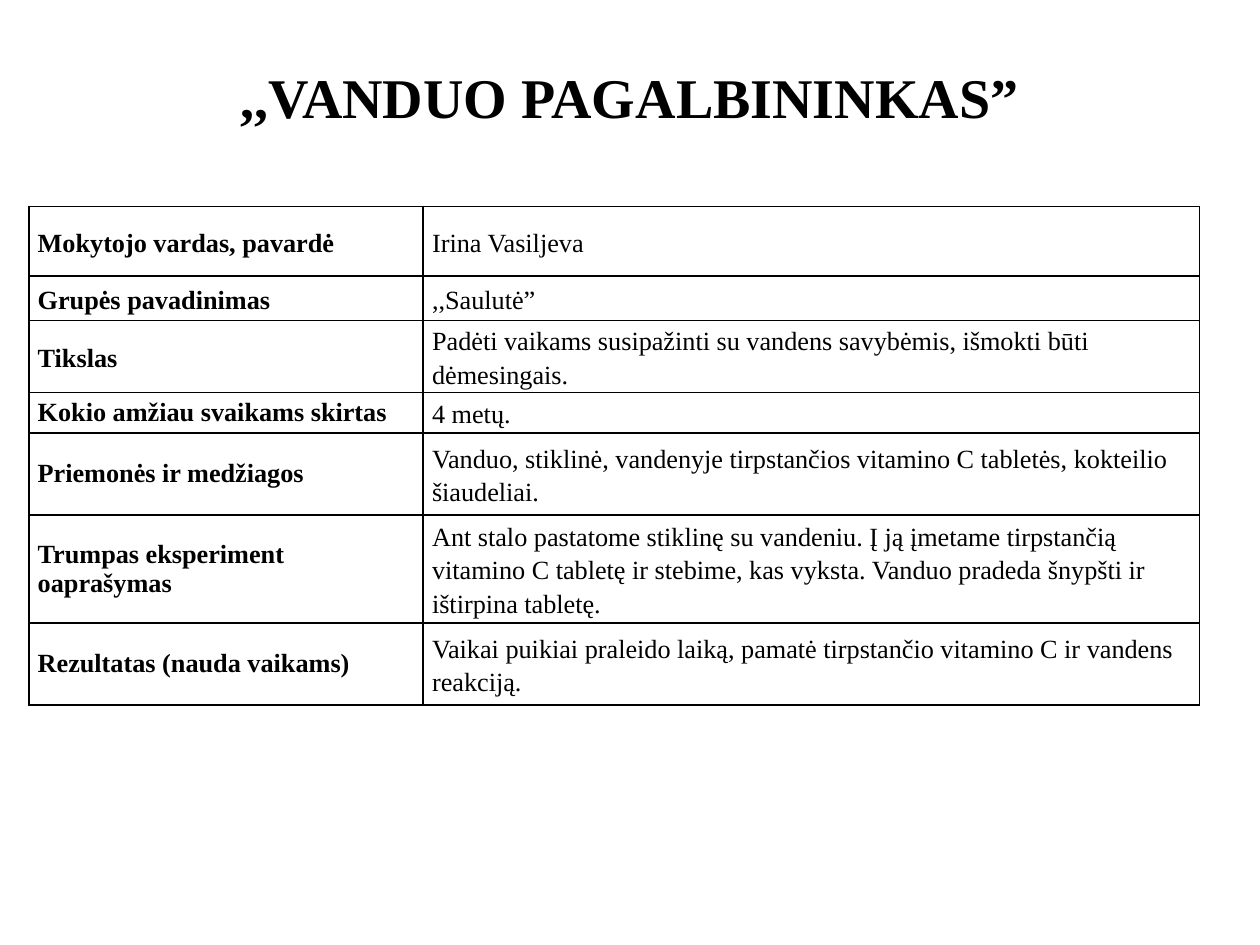
from dataclasses import dataclass

from lxml import etree
from pptx import Presentation
from pptx.dml.color import RGBColor
from pptx.enum.text import MSO_ANCHOR, PP_ALIGN
from pptx.oxml.ns import qn
from pptx.util import Cm, Pt

MIDDLE = MSO_ANCHOR.MIDDLE
CENTER = PP_ALIGN.CENTER
FONT = "Times New Roman"
COLORS = {"text": "000000", "border": "000000", "cell": "FFFFFF"}
COLUMN_WIDTHS = (7.95, 15.65)


@dataclass(frozen=True)
class Row:
    label: str
    text: str
    height: float
    label_spacing: float = 1.0


ROWS = (
    Row("Mokytojo vardas, pavardė", "Irina Vasiljeva", 1.4, 1.15),
    Row("Grupės pavadinimas", ",,Saulutė”", 0.9, 1.15),
    Row("Tikslas", "Padėti vaikams susipažinti su vandens savybėmis, "
        "išmokti būti dėmesingais.", 1.45, 1.15),
    Row("Kokio amžiau svaikams skirtas", "4 metų.", 0.82),
    Row("Priemonės ir medžiagos", "Vanduo, stiklinė, vandenyje tirpstančios "
        "vitamino C tabletės, kokteilio šiaudeliai.", 1.65),
    Row("Trumpas eksperiment oaprašymas", "Ant stalo pastatome stiklinę su vandeniu. "
        "Į ją įmetame tirpstančią vitamino C tabletę ir stebime, kas vyksta. "
        "Vanduo pradeda šnypšti ir ištirpina tabletę.", 2.18),
    Row("Rezultatas (nauda vaikams)", "Vaikai puikiai praleido laiką, pamatė "
        "tirpstančio vitamino C ir vandens reakciją.", 1.65),
)


def add_run(p, text: str, size: float, bold: bool) -> None:
    r = p.add_run()
    r.text = text
    r.font.name = FONT
    r.font.size = Pt(size)
    r.font.bold = bold
    r.font.color.rgb = RGBColor.from_string(COLORS["text"])


def add_borders(cell) -> None:
    tc_pr = cell._tc.get_or_add_tcPr()
    for side in ("lnL", "lnR", "lnT", "lnB"):
        ln = etree.SubElement(tc_pr, qn(f"a:{side}"), w=str(Pt(1)))
        fill = etree.SubElement(ln, qn("a:solidFill"))
        etree.SubElement(fill, qn("a:srgbClr"), val=COLORS["border"])


def fill_cell(cell, text: str, bold: bool, spacing: float) -> None:
    add_borders(cell)
    cell.fill.solid()
    cell.fill.fore_color.rgb = RGBColor.from_string(COLORS["cell"])
    cell.vertical_anchor = MIDDLE
    cell.margin_left = cell.margin_right = Cm(0.18)
    cell.margin_top = cell.margin_bottom = 0
    p = cell.text_frame.paragraphs[0]
    p.line_spacing = spacing
    add_run(p, text, 15, bold)


def add_title(s, text: str) -> None:
    sp = s.shapes.add_textbox(0, Cm(0.95), Cm(25.4), Cm(1.96))
    tf = sp.text_frame
    tf.word_wrap = True
    tf.vertical_anchor = MIDDLE
    p = tf.paragraphs[0]
    p.alignment = CENTER
    add_run(p, text, 32, True)


def add_details(s, rows: tuple[Row, ...]) -> None:
    height = sum(row.height for row in rows)
    table = s.shapes.add_table(len(rows), len(COLUMN_WIDTHS), Cm(0.58), Cm(4.16),
                               Cm(sum(COLUMN_WIDTHS)), Cm(height)).table
    table.first_row = False
    table.horz_banding = False
    for column, width in zip(table.columns, COLUMN_WIDTHS):
        column.width = Cm(width)
    for i, row in enumerate(rows):
        table.rows[i].height = Cm(row.height)
        fill_cell(table.cell(i, 0), row.label, True, row.label_spacing)
        fill_cell(table.cell(i, 1), row.text, False, 1.15)


def main() -> None:
    prs = Presentation()
    prs.slide_width = Cm(25.4)
    prs.slide_height = Cm(19.05)
    s = prs.slides.add_slide(prs.slide_layouts[6])
    add_details(s, ROWS)
    add_title(s, ",,VANDUO PAGALBININKAS”")
    prs.save("out.pptx")


if __name__ == "__main__":
    main()
